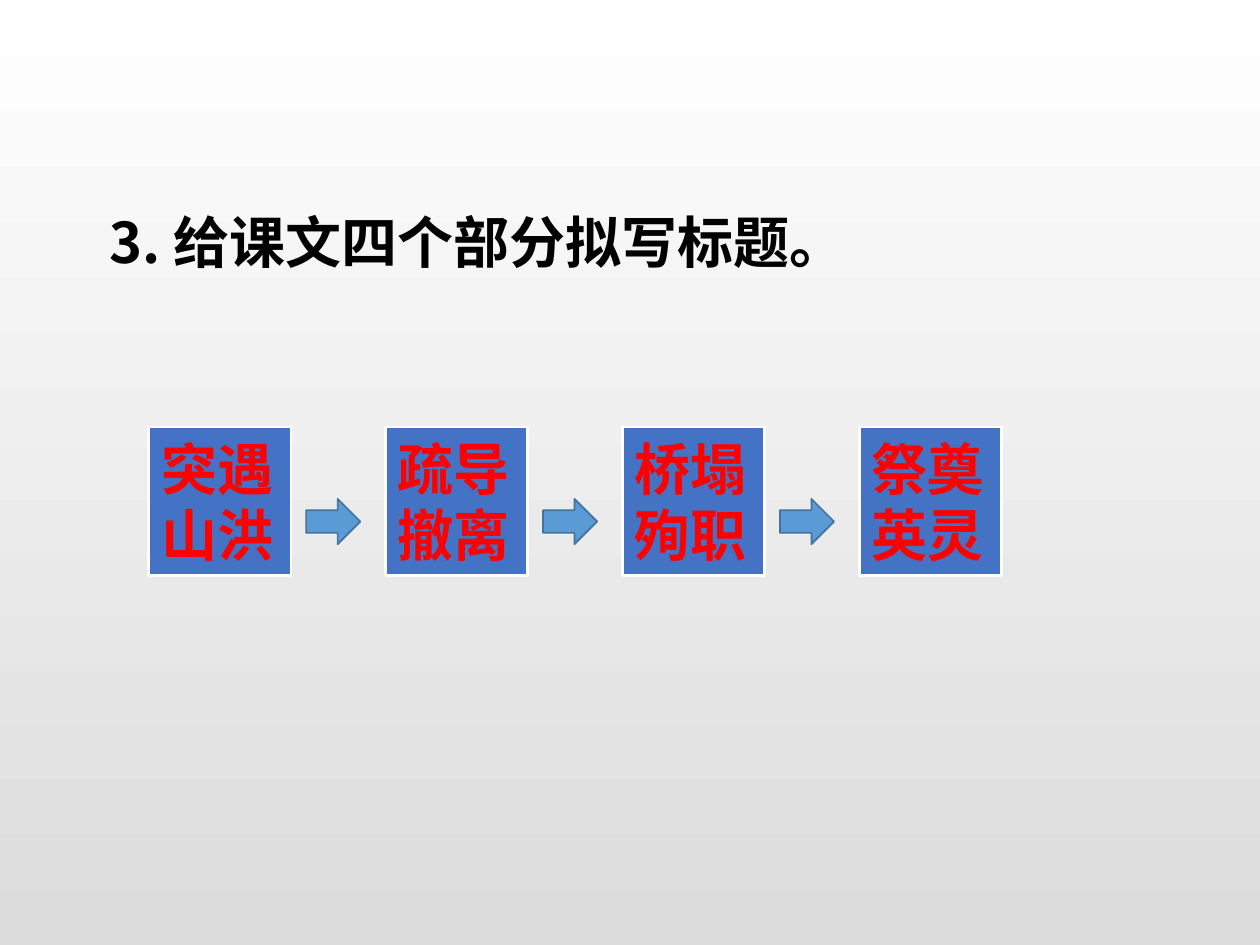
from dataclasses import dataclass
from typing import Any

from lxml import etree
from pptx import Presentation
from pptx.dml import color
from pptx.enum import shapes, text
from pptx.oxml import ns
from pptx import util as u


def rgb(value):
    return color.RGBColor.from_string(value)


@dataclass
class Lesson:
    """Draws the parts of a lesson slide in one style, with lengths in inches."""
    slide: Any
    font: str = "Noto Sans CJK SC"
    size: int = 32
    leading: int = 38

    def background(self, top, bottom):
        fill = self.slide.background.fill
        fill.gradient()
        fill.gradient_angle = 270
        for stop, value, place in zip(fill.gradient_stops, (top, bottom), (0, 1)):
            stop.color.rgb = rgb(value)
            stop.position = place

    def letter(self, frame, wording, ink, anchor):
        frame.word_wrap = True
        frame.vertical_anchor = anchor
        frame.text = wording
        line = frame.paragraphs[0]
        line.alignment = text.PP_ALIGN.LEFT
        line.line_spacing = u.Pt(self.leading)
        for run in line.runs:
            run.font.name = self.font
            run.font.size = u.Pt(self.size)
            run.font.bold = True
            run.font.color.rgb = rgb(ink)
            east = etree.SubElement(run._r.get_or_add_rPr(), ns.qn("a:ea"))
            east.set("typeface", self.font)

    def question(self, wording, *place):
        box = self.slide.shapes.add_textbox(*map(u.Inches, place))
        self.letter(box.text_frame, wording, "000000", text.MSO_ANCHOR.TOP)

    def block(self, kind, place, fill, edge, weight):
        block = self.slide.shapes.add_shape(kind, *map(u.Inches, place))
        block.shadow.inherit = False
        block.fill.solid()
        block.fill.fore_color.rgb = rgb(fill)
        block.line.color.rgb = rgb(edge)
        block.line.width = u.Pt(weight)
        return block

    def heading(self, wording, *place):
        card = self.block(shapes.MSO_SHAPE.RECTANGLE, place, "4472C4", "FFFFFF", 1.5)
        self.letter(card.text_frame, wording, "FF0000", text.MSO_ANCHOR.MIDDLE)

    def arrow(self, *place):
        self.block(shapes.MSO_SHAPE.RIGHT_ARROW, place, "5B9BD5", "43739E", 1)


def main():
    deck = Presentation()
    deck.slide_width, deck.slide_height = u.Inches(10), u.Inches(7.5)
    lesson = Lesson(deck.slides.add_slide(deck.slide_layouts[6]))
    lesson.background("FFFFFF", "DCDCDC")
    lesson.question("3. 给课文四个部分拟写标题。", 0.77, 1.6, 8.46, 0.64)

    headings = ["突遇山洪", "疏导撤离", "桥塌殉职", "祭奠英灵"]
    first, pitch = 1.18, 1.88
    for column, heading in enumerate(headings):
        left = first + column * pitch
        lesson.heading(heading, left, 3.39, 1.13, 1.18)
        if column < len(headings) - 1:
            lesson.arrow(left + 1.25, 3.96, 0.43, 0.36)
    deck.save("out.pptx")


if __name__ == "__main__":
    main()
